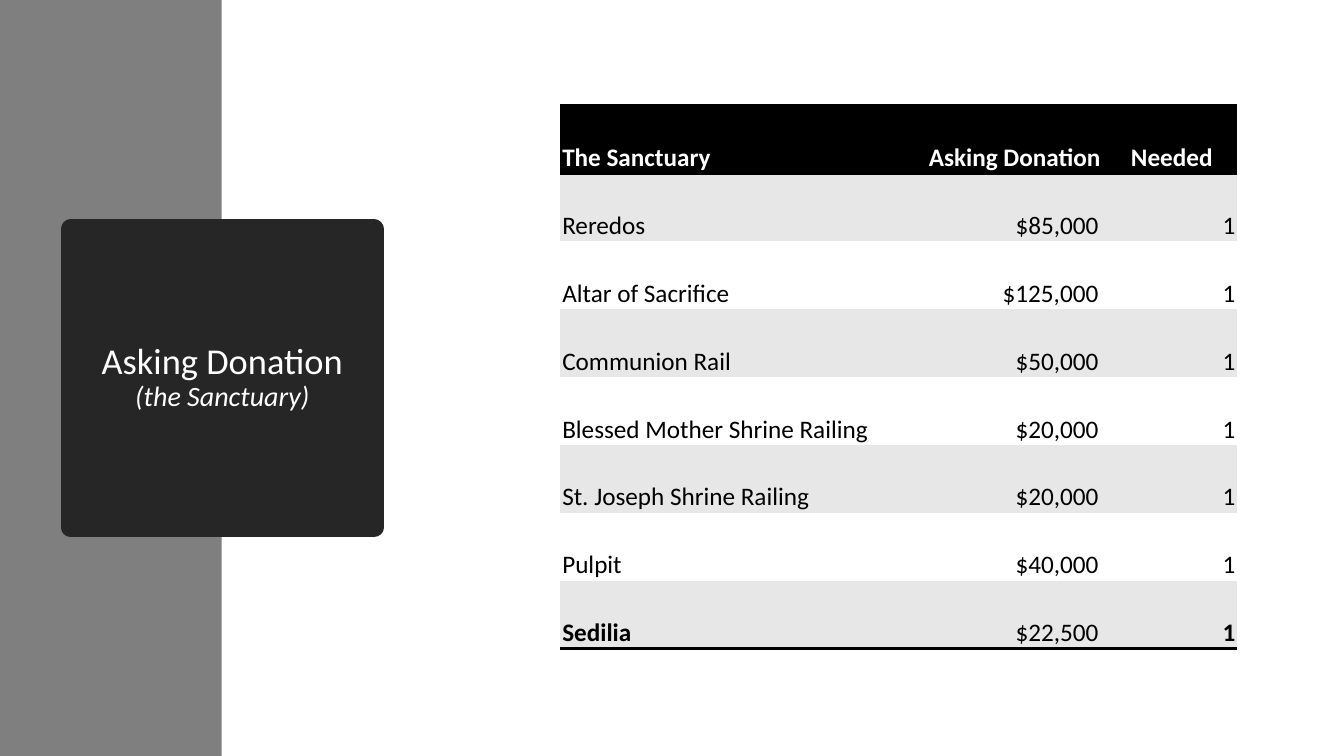
from lxml import etree
from pptx import Presentation
from pptx.dml.color import RGBColor
from pptx.enum.shapes import MSO_SHAPE
from pptx.enum.text import MSO_ANCHOR, PP_ALIGN
from pptx.oxml.ns import qn
from pptx.util import Cm, Pt

RECT = MSO_SHAPE.RECTANGLE
MIDDLE, BOTTOM = MSO_ANCHOR.MIDDLE, MSO_ANCHOR.BOTTOM
LEFT, CENTER, RIGHT = PP_ALIGN.LEFT, PP_ALIGN.CENTER, PP_ALIGN.RIGHT

COLORS = {"white": "FFFFFF", "black": "000000", "gray": "7F7F7F",
          "dark": "262626", "band": "E7E7E7"}
PLAIN_STYLE = "{2D5ABB26-0587-4C30-8999-92F81FD0307C}"
WIDTH, HEIGHT = 33.87, 19.05
COL_WIDTHS = (9.14, 4.62, 3.3)
ROW_HEIGHT = 1.71
HEADS = ("The Sanctuary", "Asking Donation", "Needed")
ITEMS = (
    ("Reredos", "$85,000", "1"),
    ("Altar of Sacrifice", "$125,000", "1"),
    ("Communion Rail", "$50,000", "1"),
    ("Blessed Mother Shrine Railing", "$20,000", "1"),
    ("St. Joseph Shrine Railing", "$20,000", "1"),
    ("Pulpit", "$40,000", "1"),
    ("Sedilia", "$22,500", "1"),
)


def rgb(name):
    return RGBColor.from_string(COLORS[name])


def add_text(para, text, size=18, color="black", bold=False, italic=False,
             align=LEFT):
    para.alignment = align
    run = para.add_run()
    run.text = text
    font = run.font
    font.name, font.size = "Calibri", Pt(size)
    font.bold, font.italic = bold, italic
    font.color.rgb = rgb(color)


def add_panel(slide, left, top, width, height, color):
    panel = slide.shapes.add_shape(RECT, Cm(left), Cm(top), Cm(width), Cm(height))
    panel.shadow.inherit = False
    panel.fill.solid()
    panel.fill.fore_color.rgb = rgb(color)
    panel.line.fill.background()
    return panel


def add_title(slide):
    box = add_panel(slide, 1.78, 5.77, 7.65, 7.52, "dark")
    box.line.color.rgb = rgb("dark")
    box.line.width = Pt(13.75)
    etree.SubElement(box.line._get_or_add_ln(), qn("a:round"))
    frame = box.text_frame
    frame.word_wrap = True
    frame.vertical_anchor = MIDDLE
    para = frame.paragraphs[0]
    para.line_spacing = 0.9
    add_text(para, "Asking Donation", size=26, color="white", align=CENTER)
    para.add_line_break()
    add_text(para, "(the Sanctuary)", size=20, color="white", italic=True,
             align=CENTER)


def add_border(cell, side):
    """Draw a black rule on one side, "T" or "B"; call before filling."""
    props = cell._tc.get_or_add_tcPr()
    line = etree.SubElement(props, qn(f"a:ln{side}"), w=str(Pt(2)))
    fill = etree.SubElement(line, qn("a:solidFill"))
    etree.SubElement(fill, qn("a:srgbClr"), val=COLORS["black"])


def fill_cell(cell, text, fill, sides="", pad=0.05, **style):
    cell.vertical_anchor = BOTTOM
    cell.margin_left = cell.margin_top = Cm(0.05)
    cell.margin_right, cell.margin_bottom = Cm(pad), Cm(0)
    for side in sides:
        add_border(cell, side)
    cell.fill.solid()
    cell.fill.fore_color.rgb = rgb(fill)
    add_text(cell.text_frame.paragraphs[0], text, **style)


def add_prices(slide):
    count = len(ITEMS) + 1
    table = slide.shapes.add_table(
        count, len(HEADS), Cm(14.12), Cm(2.66),
        Cm(sum(COL_WIDTHS)), Cm(ROW_HEIGHT * count)).table
    table.first_row = table.horz_banding = False
    table._tbl.tblPr.find(qn("a:tableStyleId")).text = PLAIN_STYLE
    for col, width in zip(table.columns, COL_WIDTHS):
        col.width = Cm(width)
    for row in table.rows:
        row.height = Cm(ROW_HEIGHT)

    for col, head in enumerate(HEADS):
        fill_cell(table.cell(0, col), head, "black", sides="TB", color="white",
                  bold=True, align=CENTER if col else LEFT)
    for row, item in enumerate(ITEMS, 1):
        last = row == len(ITEMS)
        for col, text in enumerate(item):
            price = col == 1
            fill_cell(table.cell(row, col), text, "band" if row % 2 else "white",
                      sides="B" if last else "", pad=0.2 if price else 0.05,
                      bold=last and not price, align=RIGHT if col else LEFT)


def main():
    deck = Presentation()
    deck.slide_width, deck.slide_height = Cm(WIDTH), Cm(HEIGHT)
    slide = deck.slides.add_slide(deck.slide_layouts[6])
    add_panel(slide, 0, 0, WIDTH, HEIGHT, "white")
    add_panel(slide, 0, 0, 5.59, HEIGHT, "gray")
    add_title(slide)
    add_prices(slide)
    deck.save("out.pptx")


if __name__ == "__main__":
    main()
